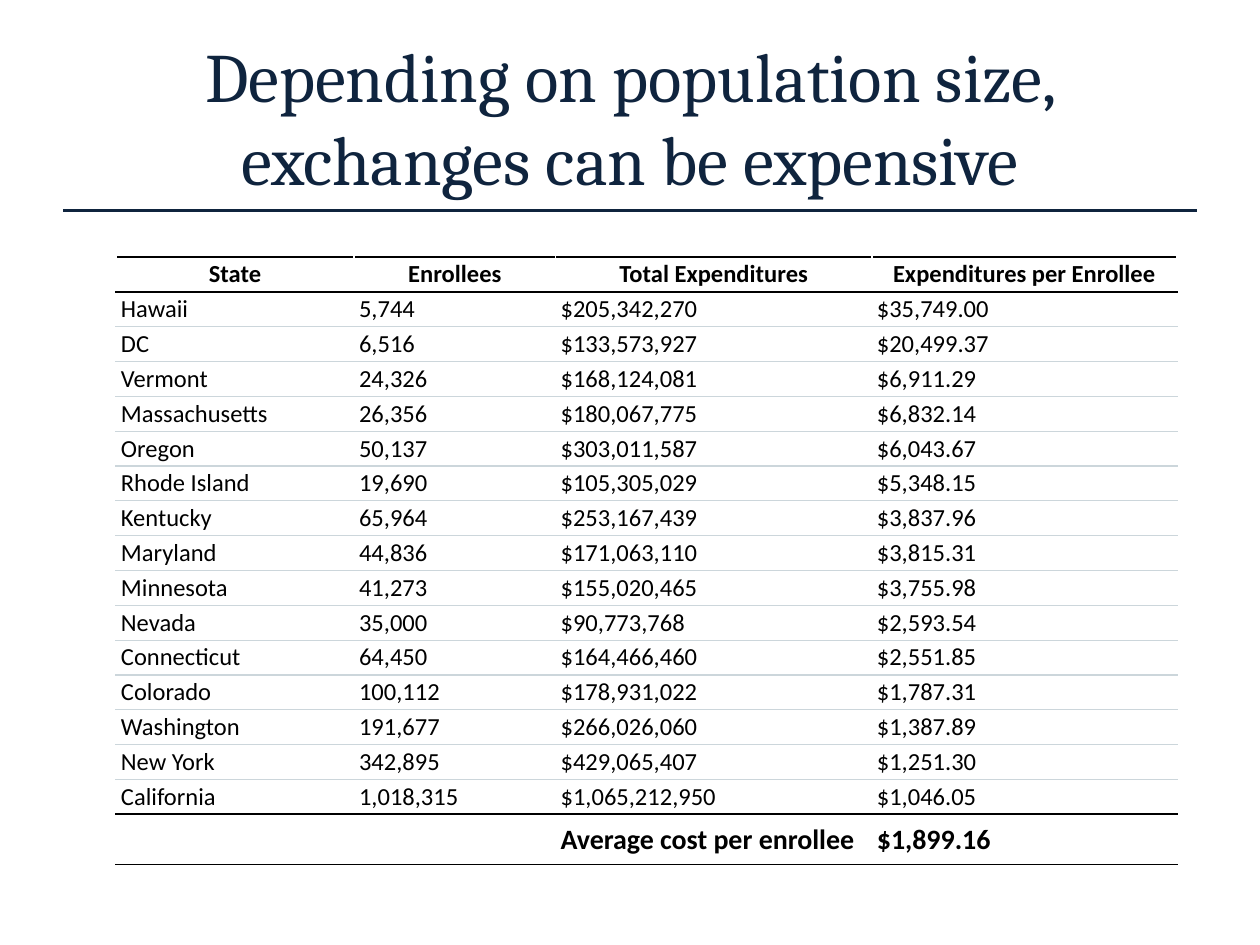
from pptx import Presentation
from pptx.dml.color import RGBColor as RGB
from pptx.enum.shapes import MSO_CONNECTOR as Conn
from pptx.enum.text import MSO_ANCHOR as Anchor, MSO_AUTO_SIZE as Fit, PP_ALIGN as Align
from pptx.oxml.ns import qn
from pptx.util import Inches, Pt
from lxml.etree import SubElement as Sub, Element

HUES = {"navy": "0F243E", "black": "000000", "rule": "CCD6DB", "white": "FFFFFF"}
HEAD = ("State", "Enrollees", "Total Expenditures", "Expenditures per Enrollee")
STATES = [
    ("Hawaii", "5,744", "$205,342,270", "$35,749.00"),
    ("DC", "6,516", "$133,573,927", "$20,499.37"),
    ("Vermont", "24,326", "$168,124,081", "$6,911.29"),
    ("Massachusetts", "26,356", "$180,067,775", "$6,832.14"),
    ("Oregon", "50,137", "$303,011,587", "$6,043.67"),
    ("Rhode Island", "19,690", "$105,305,029", "$5,348.15"),
    ("Kentucky", "65,964", "$253,167,439", "$3,837.96"),
    ("Maryland", "44,836", "$171,063,110", "$3,815.31"),
    ("Minnesota", "41,273", "$155,020,465", "$3,755.98"),
    ("Nevada", "35,000", "$90,773,768", "$2,593.54"),
    ("Connecticut", "64,450", "$164,466,460", "$2,551.85"),
    ("Colorado", "100,112", "$178,931,022", "$1,787.31"),
    ("Washington", "191,677", "$266,026,060", "$1,387.89"),
    ("New York", "342,895", "$429,065,407", "$1,251.30"),
    ("California", "1,018,315", "$1,065,212,950", "$1,046.05"),
]
TOTAL = ("", "", "Average cost per enrollee", "$1,899.16")
COLS = (1.89, 1.6, 2.51, 2.42)
HIGH, LAST = 4.79, 0.4


class Deck:
    def __init__(self):
        self.prs = Presentation()
        self.prs.slide_width, self.prs.slide_height = Inches(10), Inches(7.5)
        self.slide = self.prs.slides.add_slide(self.prs.slide_layouts[5])

    def color(self, name):
        return RGB.from_string(HUES[name])

    def add_text(self, para, text, size, font, hue, bold=False):
        run = para.add_run()
        run.text = text
        face = run.font
        face.size, face.name, face.bold = Pt(size), font, bold
        face.color.rgb = self.color(hue)

    def title(self, text, x, y, w, h):
        box = self.slide.shapes.title
        box.left, box.top, box.width, box.height = map(Inches, (x, y, w, h))
        frame = box.text_frame
        frame.word_wrap, frame.auto_size = True, Fit.NONE
        frame.vertical_anchor = Anchor.MIDDLE
        para = frame.paragraphs[0]
        para.alignment = Align.CENTER
        self.add_text(para, text, 39.6, "Cambria", "navy")

    def line(self, x, y, end):
        rule = self.slide.shapes.add_connector(
            Conn.STRAIGHT, Inches(x), Inches(y), Inches(end), Inches(y))
        rule.line.color.rgb = self.color("navy")
        rule.line.width = Pt(1.75)
        Sub(rule._element.spPr, qn("a:effectLst"))

    def edges(self, cell, top, base):
        """Draw the upper and lower border; heavy ones are black."""
        props = cell._tc.get_or_add_tcPr()
        for spot, (tag, heavy) in enumerate((("a:lnT", top), ("a:lnB", base))):
            edge = Element(qn(tag), w=str(Pt(1 if heavy else 0.75)))
            fill = Sub(edge, qn("a:solidFill"))
            Sub(fill, qn("a:srgbClr"), val=HUES["black" if heavy else "rule"])
            props.insert(spot, edge)

    def cell(self, cell, text, size, bold, align):
        cell.fill.solid()
        cell.fill.fore_color.rgb = self.color("white")
        cell.vertical_anchor = Anchor.MIDDLE
        cell.margin_left = cell.margin_right = Inches(0.04)
        cell.margin_top = cell.margin_bottom = Inches(0.02)
        if text:
            para = cell.text_frame.paragraphs[0]
            para.alignment = align
            self.add_text(para, text, size, "Calibri", "black", bold)

    def table(self, rows, x, y):
        last = len(rows) - 1
        grid = self.slide.shapes.add_table(
            len(rows), len(COLS), Inches(x), Inches(y),
            Inches(sum(COLS)), Inches(HIGH)).table
        grid.first_row = grid.horz_banding = False
        for col, wide in zip(grid.columns, COLS):
            col.width = Inches(wide)
        for r, row in enumerate(rows):
            grid.rows[r].height = Inches(LAST if r == last else (HIGH - LAST) / last)
            for c, text in enumerate(row):
                cell = grid.cell(r, c)
                self.cell(cell, text, 16 if r == last else 14, r in (0, last),
                          Align.LEFT if r else Align.CENTER)
                self.edges(cell, r in (0, 1, last), r in (0, last - 1, last))


def main():
    deck = Deck()
    deck.title("Depending on population size, exchanges can be expensive",
               0.5, 0.3, 9, 1.25)
    deck.line(0.5, 1.67, 9.5)
    deck.table([HEAD, *STATES, TOTAL], 0.92, 2.04)
    deck.prs.save("out.pptx")


if __name__ == "__main__":
    main()
